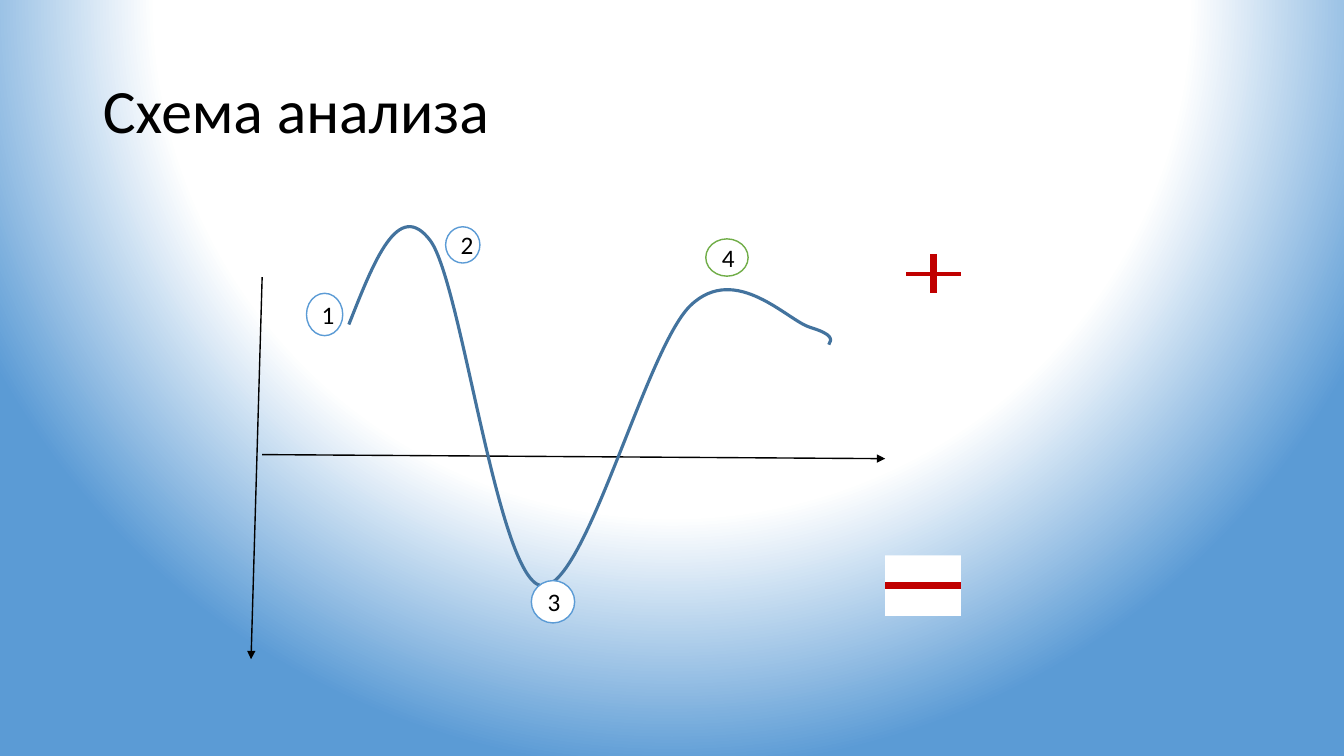
from lxml import etree
from pptx import Presentation
from pptx.dml.color import RGBColor
from pptx.enum.shapes import MSO_CONNECTOR, MSO_SHAPE
from pptx.enum.text import MSO_ANCHOR, MSO_AUTO_SIZE, PP_ALIGN
from pptx.oxml import parse_xml
from pptx.oxml.ns import nsdecls, qn
from pptx.util import Inches, Pt

BLACK = RGBColor(0x00, 0x00, 0x00)
WHITE = RGBColor(0xFF, 0xFF, 0xFF)
BLUE = RGBColor(0x5B, 0x9B, 0xD5)
DARK_BLUE = RGBColor(0x43, 0x73, 0x9E)
GREEN = RGBColor(0x70, 0xAD, 0x47)
RED = RGBColor(0xC0, 0x00, 0x00)
FONT = "Calibri"

# Start point, then two control points and an end point per segment
WAVE_START = (3.46, 3.22)
WAVE_SEGMENTS = [
    [(3.71, 2.59), (3.95, 1.96), (4.27, 2.39)],
    [(4.58, 2.82), (4.93, 5.7), (5.36, 5.81)],
    [(5.79, 5.91), (6.4, 3.46), (6.85, 3.03)],
    [(7.3, 2.6), (7.82, 3.19), (8.04, 3.25)],
    [(8.27, 3.32), (8.25, 3.37), (8.22, 3.42)],
]
STAGES_BEHIND_WAVE = [("1", (3.04, 2.91, 0.36, 0.42), BLUE)]
STAGES_ABOVE_WAVE = [
    ("2", (4.42, 2.25, 0.34, 0.36), BLUE),
    ("3", (5.27, 5.76, 0.43, 0.42), BLUE),
    ("4", (7, 2.37, 0.42, 0.37), GREEN),
]


def set_background(slide):
    """Radial glow: white centre above the slide, blue towards the edges."""
    slide.background.fill.gradient()
    gradient = slide.background._cSld.find(".//" + qn("a:gradFill"))
    stops = "".join(
        f'<a:gs pos="{position}"><a:srgbClr val="{color}"/></a:gs>'
        for position, color in [(0, WHITE), (67000, WHITE), (100000, BLUE)]
    )
    glow = parse_xml(
        f'<a:gradFill {nsdecls("a")} rotWithShape="1"><a:gsLst>{stops}</a:gsLst>'
        '<a:path path="circle"><a:fillToRect l="50000" t="-80000" '
        'r="50000" b="180000"/></a:path></a:gradFill>'
    )
    gradient.getparent().replace(gradient, glow)


def style_run(run, size):
    run.font.name = FONT
    run.font.size = Pt(size)
    run.font.color.rgb = BLACK


def add_title(slide, text, box):
    title = slide.shapes.title
    title.left, title.top, title.width, title.height = map(Inches, box)
    frame = title.text_frame
    frame.text = text
    frame.auto_size = MSO_AUTO_SIZE.NONE
    frame.vertical_anchor = MSO_ANCHOR.MIDDLE
    paragraph = frame.paragraphs[0]
    paragraph.alignment = PP_ALIGN.LEFT
    paragraph.line_spacing = 0.9
    style_run(paragraph.runs[0], 44)


def add_line(slide, start, end, color, width, arrow=False):
    line = slide.shapes.add_connector(
        MSO_CONNECTOR.STRAIGHT, *map(Inches, (*start, *end)))
    line.line.color.rgb = color
    line.line.width = Pt(width)
    if arrow:
        etree.SubElement(line.line._get_or_add_ln(), qn("a:tailEnd"), type="triangle")
    etree.SubElement(line._element.spPr, qn("a:effectLst"))


def add_panel(slide, preset, box):
    panel = slide.shapes.add_shape(preset, *map(Inches, box))
    panel.shadow.inherit = False
    panel.fill.solid()
    panel.fill.fore_color.rgb = WHITE
    panel.line.fill.background()
    return panel


def add_stages(slide, stages):
    for number, box, color in stages:
        stage = add_panel(slide, MSO_SHAPE.OVAL, box)
        stage.line.color.rgb = color
        stage.line.width = Pt(1)
        frame = stage.text_frame
        frame.text = number
        frame.vertical_anchor = MSO_ANCHOR.MIDDLE
        frame.paragraphs[0].alignment = PP_ALIGN.CENTER
        style_run(frame.paragraphs[0].runs[0], 18)


def add_wave(slide, box):
    """Freeform spanning the box, its outline made of Bézier segments."""
    left, top, width, height = map(Inches, box)
    builder = slide.shapes.build_freeform(left, top)
    builder.add_line_segments([(left + width, top + height)], close=False)
    wave = builder.convert_to_shape()
    wave.shadow.inherit = False
    wave.fill.background()
    wave.line.color.rgb = DARK_BLUE
    wave.line.width = Pt(2.25)

    outline = wave._element.find(".//" + qn("a:pathLst"))[0]
    for step in list(outline):
        outline.remove(step)
    steps = [("a:moveTo", [WAVE_START])]
    steps += [("a:cubicBezTo", points) for points in WAVE_SEGMENTS]
    for tag, points in steps:
        step = etree.SubElement(outline, qn(tag))
        for x, y in points:
            etree.SubElement(step, qn("a:pt"), x=str(Inches(x) - left),
                             y=str(Inches(y) - top))


def add_axes(slide, box):
    """Slightly tilted axes: time to the right, the vertical one downwards."""
    left, top, width, height = box
    add_line(slide, (left + 0.11, top), (left, top + height), BLACK, 1, arrow=True)
    add_line(slide, (left + 0.11, top + 1.76), (left + width, top + 1.8),
             BLACK, 1, arrow=True)


def add_sign(slide, preset, box, bar_width, plus=False):
    left, top, width, height = box
    add_panel(slide, preset, box)
    middle_x, middle_y = left + width / 2, top + height / 2
    if plus:
        add_line(slide, (middle_x, top), (middle_x, top + height), RED, 4.5)
    add_line(slide, (left, middle_y), (left + width, middle_y), RED, bar_width)


def main():
    presentation = Presentation()
    presentation.slide_width = Inches(13.33)
    presentation.slide_height = Inches(7.5)
    slide = presentation.slides.add_slide(presentation.slide_layouts[5])
    set_background(slide)
    add_title(slide, "Схема анализа", (0.92, 0.4, 11.5, 1.45))
    add_axes(slide, (2.49, 2.75, 6.29, 3.79))
    add_stages(slide, STAGES_BEHIND_WAVE)
    add_wave(slide, (3.46, 2.25, 4.78, 3.56))
    add_stages(slide, STAGES_ABOVE_WAVE)
    add_sign(slide, MSO_SHAPE.ROUNDED_RECTANGLE, (8.99, 2.52, 0.54, 0.39), 3, plus=True)
    add_sign(slide, MSO_SHAPE.RECTANGLE, (8.78, 5.51, 0.75, 0.6), 4.5)
    presentation.save("out.pptx")


if __name__ == "__main__":
    main()
